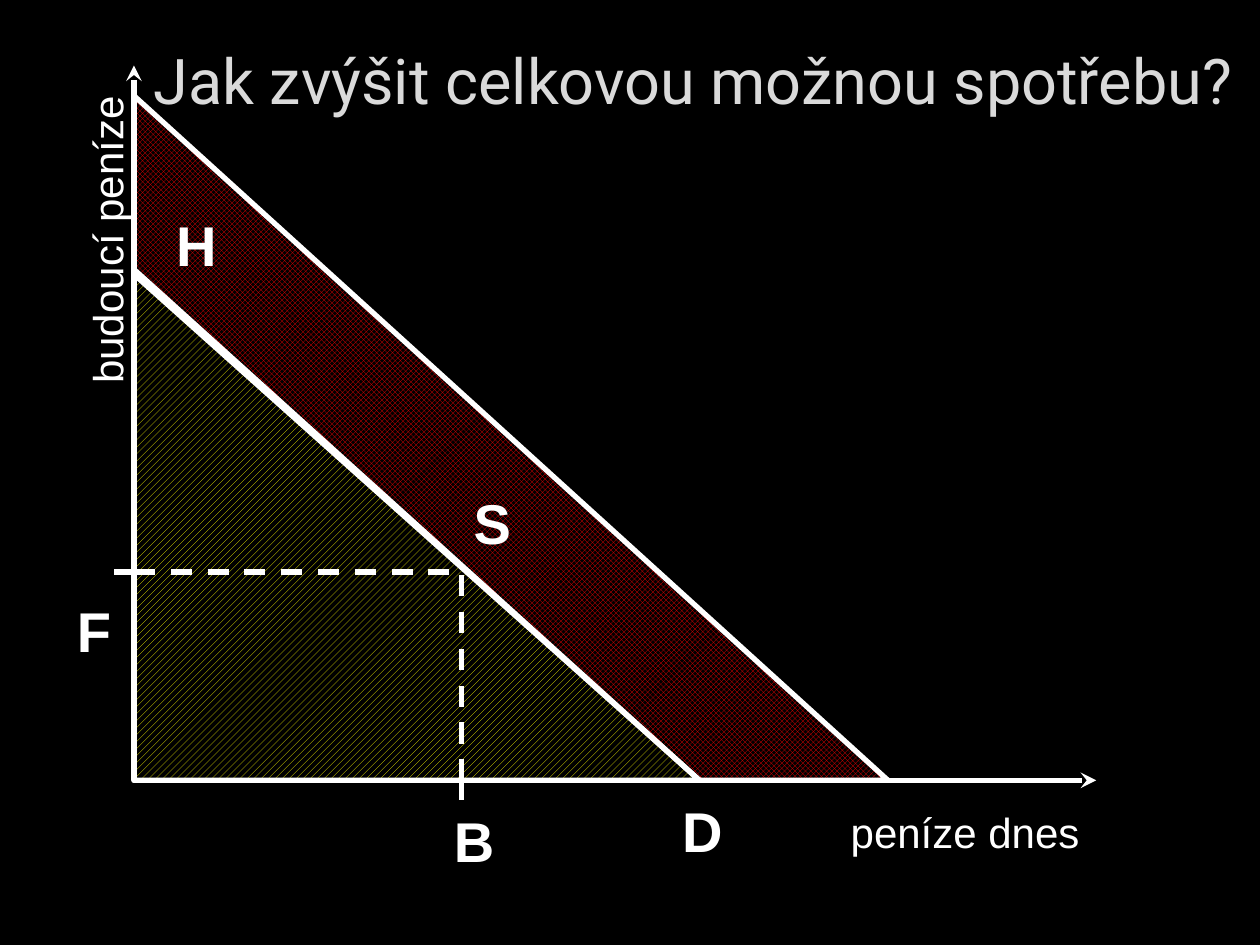
from dataclasses import dataclass

from lxml.etree import SubElement
from pptx import Presentation
from pptx.dml.color import RGBColor
from pptx.enum.dml import MSO_LINE, MSO_PATTERN
from pptx.enum.shapes import MSO_CONNECTOR, MSO_SHAPE
from pptx.enum.text import MSO_ANCHOR, PP_ALIGN
from pptx.oxml.ns import qn
from pptx.util import Cm, Pt


@dataclass(frozen=True)
class Theme:
    background: RGBColor = RGBColor(0x00, 0x00, 0x00)
    ink: RGBColor = RGBColor(0xFF, 0xFF, 0xFF)
    title: RGBColor = RGBColor(0xDA, 0xDA, 0xDA)
    affordable: RGBColor = RGBColor(0xFF, 0xFF, 0x00)
    gained: RGBColor = RGBColor(0xFF, 0x00, 0x00)
    title_font: str = "Roboto"
    body_font: str = "Arial"
    title_size: Pt = Pt(36)
    axis_size: Pt = Pt(24)
    point_size: Pt = Pt(32)
    line_width: Pt = Pt(3)


THEME = Theme()


@dataclass(frozen=True)
class Plane:
    """Box of the diagram in cm; its lower left corner is the origin, y grows upwards."""
    left: float
    top: float
    width: float
    height: float

    def at(self, x, y):
        return Cm(self.left + x), Cm(self.top + self.height - y)


def add_text(slide, left, top, width, height, text, size, bold=False):
    box = slide.shapes.add_textbox(left, top, width, height)
    box.text_frame.word_wrap = True
    paragraph = box.text_frame.paragraphs[0]
    paragraph.text = text
    font = paragraph.font
    font.name, font.size, font.bold = THEME.body_font, size, bold
    font.color.rgb = THEME.ink
    return box


def add_title(slide, left, top, width, height, text):
    box = add_text(slide, left, top, width, height, text, THEME.title_size)
    box.text_frame.vertical_anchor = MSO_ANCHOR.MIDDLE
    paragraph = box.text_frame.paragraphs[0]
    paragraph.alignment = PP_ALIGN.CENTER
    paragraph.font.name = THEME.title_font
    paragraph.font.color.rgb = THEME.title


def add_line(slide, plane, start, end, dashed=False, arrow=False):
    line = slide.shapes.add_connector(
        MSO_CONNECTOR.STRAIGHT, *plane.at(*start), *plane.at(*end))
    line.line.color.rgb = THEME.ink
    line.line.width = THEME.line_width
    if dashed:
        line.line.dash_style = MSO_LINE.DASH
    if arrow:
        SubElement(line.line._get_or_add_ln(), qn("a:tailEnd"), type="stealth")
    SubElement(line._element.spPr, qn("a:effectLst"))


def add_area(slide, plane, width, height, pattern, color):
    """Hatched right triangle with its right angle at the origin."""
    area = slide.shapes.add_shape(
        MSO_SHAPE.RIGHT_TRIANGLE, *plane.at(0, height), Cm(width), Cm(height))
    area.shadow.inherit = False
    area.fill.patterned()
    area.fill.pattern = pattern
    area.fill.fore_color.rgb = color
    area.fill.back_color.rgb = THEME.background
    area.line.color.rgb = THEME.ink
    area.line.width = THEME.line_width


def add_axes(slide, plane):
    add_line(slide, plane, (0, 0), (plane.width, 0), arrow=True)
    add_line(slide, plane, (0, 0), (0, plane.height), arrow=True)
    add_text(slide, *plane.at(14.2, -0.4), Cm(5.6), Cm(1.27),
             "peníze dnes", THEME.axis_size)
    future = add_text(slide, *plane.at(-4.55, 12.38), Cm(8), Cm(1.27),
                      "budoucí peníze", THEME.axis_size)
    future.rotation = 270


def add_budget_diagram(slide, plane):
    today, future, tick = 6.6, 4.2, 0.4
    add_area(slide, plane, 15.2, 13.8, MSO_PATTERN.TRELLIS, THEME.gained)
    add_area(slide, plane, 11.4, 10.2, MSO_PATTERN.WIDE_UPWARD_DIAGONAL,
             THEME.affordable)
    add_axes(slide, plane)
    add_line(slide, plane, (today, tick), (today, -tick))
    add_line(slide, plane, (-tick, future), (tick, future))
    add_line(slide, plane, (today, 0), (today, future), dashed=True)
    add_line(slide, plane, (0, future), (today, future), dashed=True)
    add_line(slide, plane, (0, 10.3), (11.4, 0))

    points = {"B": (6.2, -0.4), "F": (-1.4, 3.82), "S": (today, 6),
              "D": (10.8, -0.2), "H": (0.6, 11.62)}
    for name, corner in points.items():
        add_text(slide, *plane.at(*corner), Cm(1.2), Cm(1.6), name,
                 THEME.point_size, bold=True)


def main():
    presentation = Presentation()
    presentation.slide_width, presentation.slide_height = Cm(25.4), Cm(19.05)
    slide = presentation.slides.add_slide(presentation.slide_layouts[6])
    slide.background.fill.solid()
    slide.background.fill.fore_color.rgb = THEME.background
    add_budget_diagram(slide, Plane(left=2.7, top=1.32, width=19.4, height=14.41))
    add_title(slide, Cm(2.54), Cm(0), Cm(22.86), Cm(3.18),
              "Jak zvýšit celkovou možnou spotřebu?")
    presentation.save("out.pptx")


if __name__ == "__main__":
    main()
